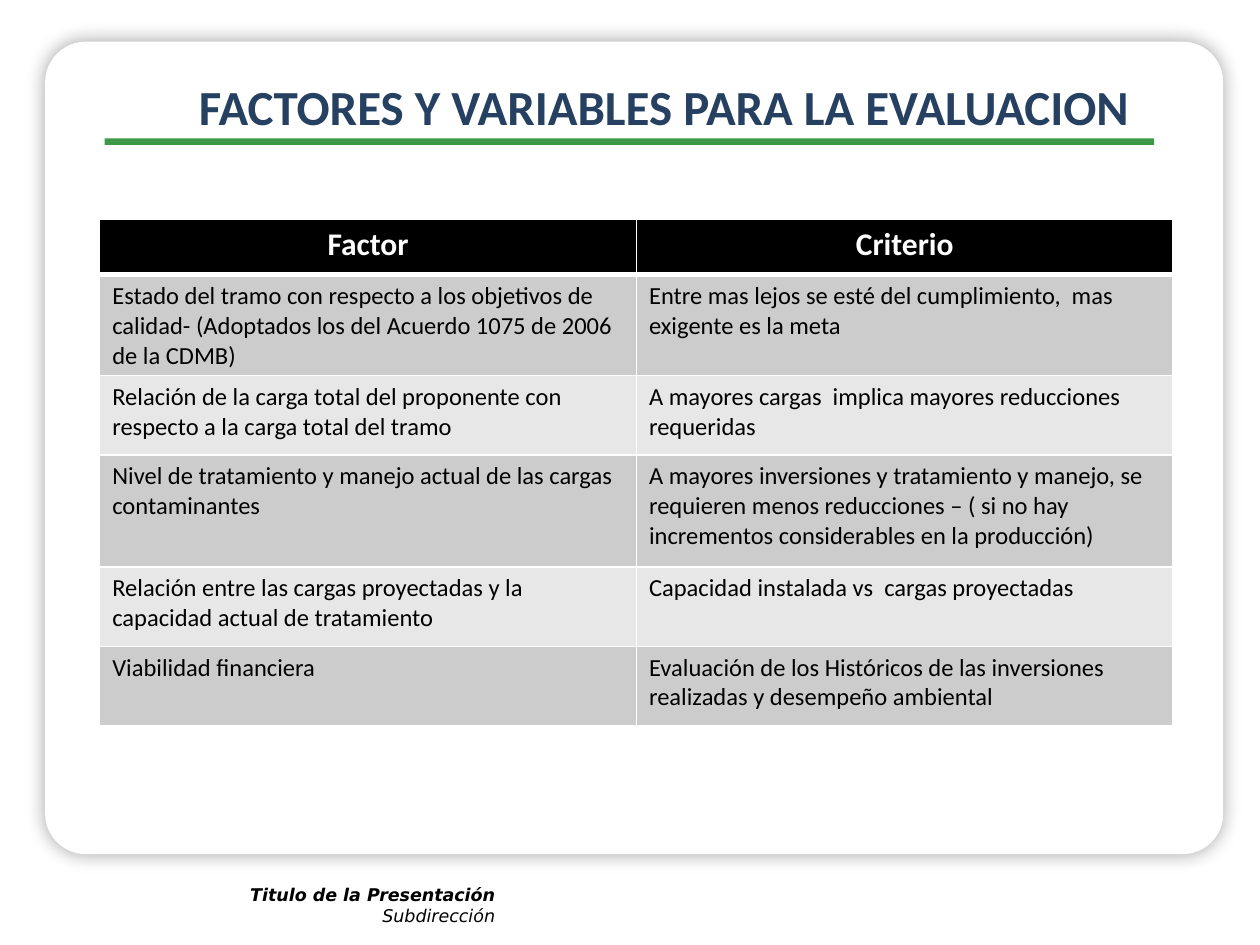
"""Build the slide on evaluation factors and criteria."""
import lxml.etree
import pptx
import pptx.dml.color
import pptx.enum.shapes
import pptx.enum.text
import pptx.oxml
import pptx.oxml.ns
import pptx.util

Cm = pptx.util.Cm
Align = pptx.enum.text.PP_ALIGN
Shape = pptx.enum.shapes.MSO_SHAPE
COLORS = {
    "white": "FFFFFF",
    "black": "000000",
    "green": "3D9948",
    "navy": "254061",
    "dark_band": "CCCCCC",
    "light_band": "E7E7E7",
}
ROWS = [
    ("Factor", "Criterio"),
    ("Estado del tramo con respecto a los objetivos de calidad- (Adoptados los del Acuerdo 1075 de 2006 de la CDMB)",
     "Entre mas lejos se esté del cumplimiento,  mas exigente es la meta"),
    ("Relación de la carga total del proponente con respecto a la carga total del tramo",
     "A mayores cargas  implica mayores reducciones requeridas"),
    ("Nivel de tratamiento y manejo actual de las cargas contaminantes",
     "A mayores inversiones y tratamiento y manejo, se requieren menos reducciones – "
     "( si no hay incrementos considerables en la producción)"),
    ("Relación entre las cargas proyectadas y la capacidad actual de tratamiento",
     "Capacidad instalada vs  cargas proyectadas"),
    ("Viabilidad financiera",
     "Evaluación de los Históricos de las inversiones realizadas y desempeño ambiental"),
]
ROW_HEIGHTS = [1.12, 1.6, 1.6, 2.26, 1.6, 1.6]


def rgb(name):
    return pptx.dml.color.RGBColor.from_string(COLORS[name])


def write(paragraph, text, size=14, font="Calibri", color="black", bold=False, italic=False, align=Align.LEFT):
    paragraph.alignment = align
    run = paragraph.add_run()
    run.text = text
    run.font.name = font
    run.font.size = pptx.util.Pt(size)
    run.font.bold = bold
    run.font.italic = italic
    run.font.color.rgb = rgb(color)


presentation = pptx.Presentation()
presentation.slide_width = Cm(25.4)
presentation.slide_height = Cm(19.05)
slide = presentation.slides.add_slide(presentation.slide_layouts[6])

panel = slide.shapes.add_shape(Shape.ROUNDED_RECTANGLE, Cm(0.91), Cm(0.84), Cm(23.75), Cm(16.38))
panel.adjustments[0] = 0.05
bar = slide.shapes.add_shape(Shape.RECTANGLE, Cm(2.11), Cm(2.79), Cm(21.16), Cm(0.13))
for shape, color in ((panel, "white"), (bar, "green")):
    shape.shadow.inherit = False
    shape.fill.solid()
    shape.fill.fore_color.rgb = rgb(color)
    shape.line.fill.background()

effects = panel.element.spPr.find(pptx.oxml.ns.qn("a:effectLst"))
shadow = lxml.etree.SubElement(effects, pptx.oxml.ns.qn("a:outerShdw"),
                               blurRad="137160", dist="0", dir="5400000", algn="ctr", rotWithShape="0")
shadow_color = lxml.etree.SubElement(shadow, pptx.oxml.ns.qn("a:srgbClr"), val=COLORS["black"])
lxml.etree.SubElement(shadow_color, pptx.oxml.ns.qn("a:alpha"), val="35000")

footer = slide.shapes.add_textbox(Cm(2.03), Cm(17.7), Cm(8.2), Cm(1.12)).text_frame
footer.word_wrap = True
write(footer.paragraphs[0], "Titulo de la Presentación", size=10, font="DejaVu Sans",
      bold=True, italic=True, align=Align.RIGHT)
write(footer.add_paragraph(), "Subdirección", size=10, font="DejaVu Sans", italic=True, align=Align.RIGHT)

title = slide.shapes.add_textbox(Cm(3.76), Cm(1.37), Cm(22.86), Cm(1.78)).text_frame
title.word_wrap = True
title.margin_top = Cm(0.18)
write(title.paragraphs[0], "FACTORES Y VARIABLES PARA LA EVALUACION", size=28, color="navy", bold=True)

table = slide.shapes.add_table(len(ROWS), 2, Cm(2.01), Cm(4.42), Cm(21.64), Cm(sum(ROW_HEIGHTS))).table
for row_index, texts in enumerate(ROWS):
    table.rows[row_index].height = Cm(ROW_HEIGHTS[row_index])
    header = row_index == 0
    band = "black" if header else "dark_band" if row_index % 2 else "light_band"
    widths = {"L": 1, "R": 1, "T": 3 if row_index == 1 else 1, "B": 3 if header else 1}
    for column_index, text in enumerate(texts):
        cell = table.cell(row_index, column_index)
        properties = cell._tc.get_or_add_tcPr()
        for side, width in widths.items():
            border = lxml.etree.SubElement(properties, pptx.oxml.ns.qn(f"a:ln{side}"), w=str(pptx.util.Pt(width)))
            line_fill = lxml.etree.SubElement(border, pptx.oxml.ns.qn("a:solidFill"))
            lxml.etree.SubElement(line_fill, pptx.oxml.ns.qn("a:srgbClr"), val=COLORS["white"])
        cell.fill.solid()
        cell.fill.fore_color.rgb = rgb(band)
        write(cell.text_frame.paragraphs[0], text, size=18 if header else 14,
              color="white" if header else "black", bold=header, align=Align.CENTER if header else Align.LEFT)

presentation.save("out.pptx")
